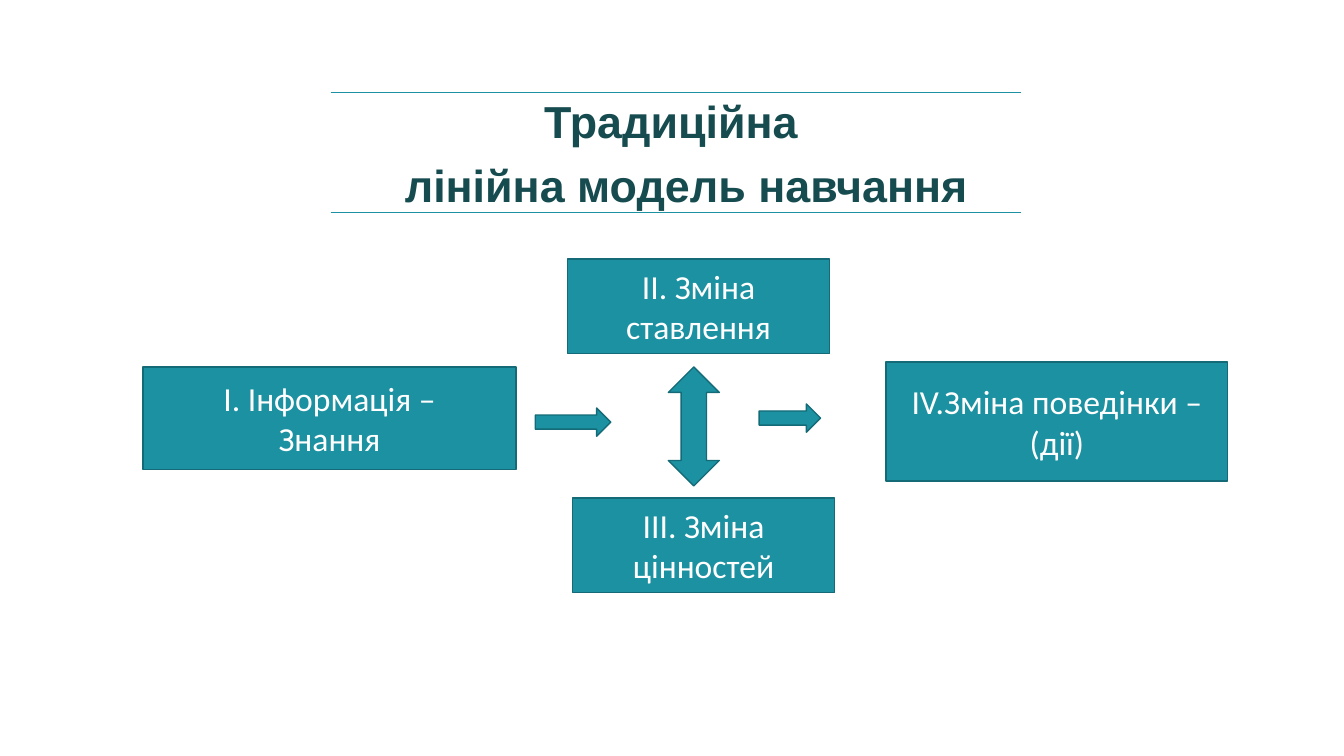
from lxml import etree
from pptx import Presentation
from pptx.dml.color import RGBColor
from pptx.enum.shapes import MSO_SHAPE
from pptx.enum.text import MSO_ANCHOR, PP_ALIGN
from pptx.oxml.ns import qn
from pptx.util import Pt

RECT = MSO_SHAPE.RECTANGLE
RIGHT_ARROW = MSO_SHAPE.RIGHT_ARROW
UP_DOWN_ARROW = MSO_SHAPE.UP_DOWN_ARROW
LEFT, CENTER = PP_ALIGN.LEFT, PP_ALIGN.CENTER
MIDDLE, BOTTOM = MSO_ANCHOR.MIDDLE, MSO_ANCHOR.BOTTOM


def rgb(hex_string):
    return RGBColor.from_string(hex_string)


class SlideBuilder:
    TEAL, EDGE, DARK, WHITE = "1B91A1", "146B77", "164B4F", "FFFFFF"
    TITLE_FONT, BOX_FONT = "Arial", "Calibri"

    def __init__(self, slide):
        self.s = slide

    def run(self, p, text, font, size, color, bold=False):
        r = p.add_run()
        r.text = text
        r.font.name, r.font.size, r.font.bold = font, Pt(size), bold
        r.font.color.rgb = rgb(color)

    def shape(self, kind, x, y, w, h):
        sp = self.s.shapes.add_shape(kind, Pt(x), Pt(y), Pt(w), Pt(h))
        sp.shadow.inherit = False
        sp.fill.solid()
        sp.fill.fore_color.rgb = rgb(self.TEAL)
        sp.line.color.rgb = rgb(self.EDGE)
        sp.line.width = Pt(1)
        return sp

    def box(self, lines, x, y, w, h):
        tf = self.shape(RECT, x, y, w, h).text_frame
        tf.word_wrap = True
        tf.vertical_anchor = MIDDLE
        for i, line in enumerate(lines):
            p = tf.add_paragraph() if i else tf.paragraphs[0]
            p.alignment = CENTER
            self.run(p, line, self.BOX_FONT, 24, self.WHITE)

    def borders(self, cell, visible):
        tc_pr = cell._tc.get_or_add_tcPr()
        for i, side in enumerate(("L", "R", "T", "B")):
            ln = etree.Element(qn("a:ln" + side), w=str(Pt(1)))
            if side == visible:
                fill = etree.SubElement(ln, qn("a:solidFill"))
                etree.SubElement(fill, qn("a:srgbClr"), val=self.TEAL)
            else:
                etree.SubElement(ln, qn("a:noFill"))
            tc_pr.insert(i, ln)

    def title_table(self, rows, x, y, w, row_h):
        frame = self.s.shapes.add_table(
            len(rows), 1, Pt(x), Pt(y), Pt(w), Pt(row_h * len(rows)))
        table = frame.table
        table.first_row = table.horz_banding = False
        for i, (text, align, anchor, indent, side) in enumerate(rows):
            table.rows[i].height = Pt(row_h)
            cell = table.cell(i, 0)
            cell.margin_left = cell.margin_right = 0
            cell.margin_top = cell.margin_bottom = 0
            cell.vertical_anchor = anchor
            cell.fill.background()
            self.borders(cell, side)
            p = cell.text_frame.paragraphs[0]
            p.alignment = align
            p._p.get_or_add_pPr().set("marL", str(Pt(indent)))
            self.run(p, text, self.TITLE_FONT, 32, self.DARK, True)


def main():
    prs = Presentation()
    prs.slide_width, prs.slide_height = Pt(960), Pt(540)
    b = SlideBuilder(prs.slides.add_slide(prs.slide_layouts[6]))

    # Stages of the model
    b.box(["ІІ. Зміна ставлення"], 405.4, 185, 187.2, 67.7)
    b.box(["IV.Зміна поведінки –", "(дії)"], 632.9, 258.5, 244.1, 85)
    b.box(["І. Інформація –", "Знання"], 102.2, 262.1, 266.4, 73.4)
    b.box(["ІІІ. Зміна цінностей"], 409, 355.7, 187.2, 67.7)

    # Heading between two rules
    b.title_table([
        ("Традиційна", LEFT, MIDDLE, 152.5, "T"),
        ("лінійна модель навчання", CENTER, BOTTOM, 15, "B"),
    ], 236.2, 66.2, 493.2, 42.85)

    # Arrows between stages
    b.shape(RIGHT_ARROW, 382.3, 291.4, 54, 20.2)
    b.shape(RIGHT_ARROW, 542.2, 288.5, 43.9, 20.2)
    b.shape(UP_DOWN_ARROW, 477.4, 262.1, 36.4, 85)

    prs.save("out.pptx")


if __name__ == "__main__":
    main()
